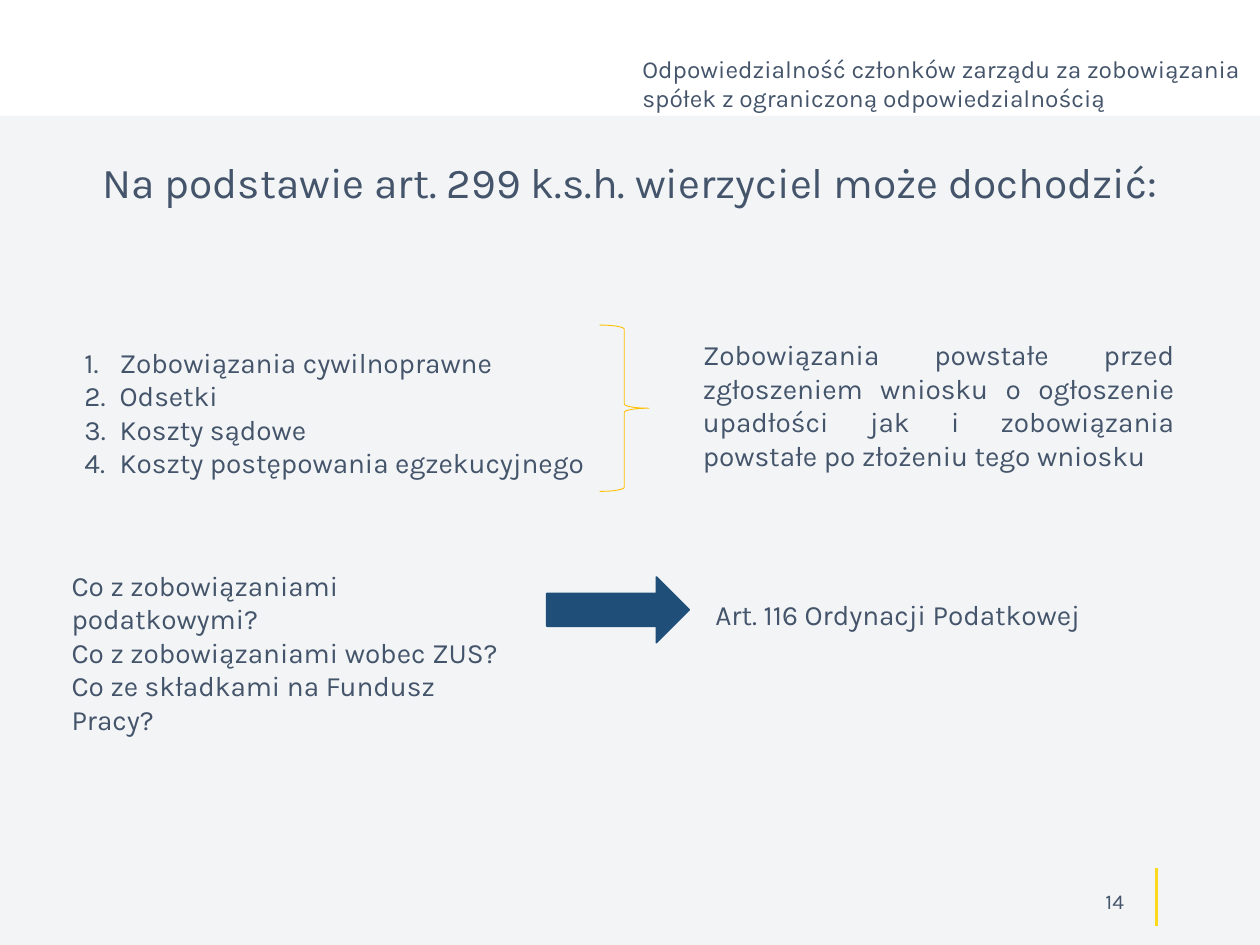
import pptx
import pptx.util
import pptx.dml.color
import pptx.enum.shapes
import pptx.enum.text
import pptx.oxml.ns
from lxml import etree

WIDTH, HEIGHT = 10, 7.5
FONT, TEXT = "Karla", "44546A"
PANEL, ACCENT, ARROW, BRACE = "F2F4F6", "FCD91D", "1F4E79", "FFC000"
ALIGN = pptx.enum.text.PP_ALIGN
ANCHOR = pptx.enum.text.MSO_ANCHOR
SHAPE = pptx.enum.shapes.MSO_SHAPE

TITLE = "Na podstawie art. 299 k.s.h. wierzyciel może dochodzić:"
CLAIMS = [
    "Zobowiązania cywilnoprawne",
    "Odsetki",
    "Koszty sądowe",
    "Koszty postępowania egzekucyjnego",
]
TEXT_BOXES = [
    {"box": (5.48, 2.63, 3.94, 1.18), "align": ALIGN.JUSTIFY, "lines": [
        "Zobowiązania powstałe przed zgłoszeniem wniosku o ogłoszenie upadłości "
        "jak i zobowiązania powstałe po złożeniu tego wniosku"]},
    {"box": (0.47, 4.46, 3.77, 1.43), "lines": [
        "Co z zobowiązaniami podatkowymi?",
        "Co z zobowiązaniami wobec ZUS?",
        "Co ze składkami na Fundusz Pracy?"]},
    {"box": (5.58, 4.69, 3.21, 0.37), "lines": ["Art. 116 Ordynacji Podatkowej"]},
    {"box": (5, 0.38, 5, 0.57), "size": 14, "lines": [
        "Odpowiedzialność członków zarządu za zobowiązania "
        "spółek z ograniczoną odpowiedzialnością"]},
    {"box": (7.06, 6.95, 1.96, 0.4), "size": 12, "align": ALIGN.RIGHT,
     "anchor": ANCHOR.MIDDLE, "lines": ["14"]},
]


def color(value):
    return pptx.dml.color.RGBColor.from_string(value)


def inches(values):
    return [pptx.util.Inches(value) for value in values]


def place(shape, box):
    shape.left, shape.top, shape.width, shape.height = inches(box)


def write(shape, lines, size=16, align=ALIGN.LEFT, anchor=ANCHOR.TOP):
    frame = shape.text_frame
    frame.word_wrap = True
    frame.auto_size = pptx.enum.text.MSO_AUTO_SIZE.NONE
    frame.vertical_anchor = anchor
    for index, line in enumerate(lines):
        paragraph = frame.add_paragraph() if index else frame.paragraphs[0]
        paragraph.alignment = align
        paragraph.space_before = pptx.util.Pt(0)
        run = paragraph.add_run()
        run.text = line
        run.font.name = FONT
        run.font.size = pptx.util.Pt(size)
        run.font.color.rgb = color(TEXT)
    return frame


def number(paragraph, indent):
    properties = paragraph._p.get_or_add_pPr()
    properties.set("marL", str(pptx.util.Inches(indent)))
    properties.set("indent", str(-pptx.util.Inches(indent)))
    bullet = etree.SubElement(properties, pptx.oxml.ns.qn("a:buAutoNum"))
    bullet.set("type", "arabicPeriod")


def add_shape(slide, kind, box, fill=None, line=None, weight=1):
    shape = slide.shapes.add_shape(kind, *inches(box))
    shape.shadow.inherit = False
    if fill:
        shape.fill.solid()
        shape.fill.fore_color.rgb = color(fill)
    else:
        shape.fill.background()
    if line:
        shape.line.color.rgb = color(line)
        shape.line.width = pptx.util.Pt(weight)
    else:
        shape.line.fill.background()
    return shape


def add_line(slide, start, end, line, weight):
    connector = slide.shapes.add_connector(
        pptx.enum.shapes.MSO_CONNECTOR.STRAIGHT, *inches(start + end))
    connector.line.color.rgb = color(line)
    connector.line.width = pptx.util.Pt(weight)
    etree.SubElement(connector._element.spPr, pptx.oxml.ns.qn("a:effectLst"))


def main():
    presentation = pptx.Presentation()
    presentation.slide_width, presentation.slide_height = inches((WIDTH, HEIGHT))
    slide = presentation.slides.add_slide(presentation.slide_layouts[1])

    panel_top = 0.92
    panel = add_shape(slide, SHAPE.RECTANGLE,
                      (0, panel_top, WIDTH, HEIGHT - panel_top), PANEL)
    slide.shapes._spTree.insert(2, panel._element)
    add_line(slide, (9.18, 6.89), (9.18, 7.35), ACCENT, 1.5)

    title = slide.shapes.title
    place(title, (0, 1.37, WIDTH, 0.68))
    frame = write(title, [TITLE], 24.3, ALIGN.CENTER, ANCHOR.BOTTOM)
    frame.margin_top, frame.margin_bottom = inches((0, 0.4))
    frame.paragraphs[0].line_spacing = 0.9

    claims = slide.placeholders[1]
    place(claims, (0.57, 2.69, 4.25, 1.41))
    for paragraph in write(claims, CLAIMS).paragraphs:
        number(paragraph, 0.28)

    for item in TEXT_BOXES:
        options = dict(item)
        text_box = slide.shapes.add_textbox(*inches(options.pop("box")))
        write(text_box, **options)

    add_shape(slide, SHAPE.RIGHT_ARROW, (4.34, 4.58, 1.13, 0.52), ARROW, ARROW)
    add_shape(slide, SHAPE.RIGHT_BRACE, (4.76, 2.58, 0.39, 1.32), line=BRACE, weight=0.5)
    presentation.save("out.pptx")


if __name__ == "__main__":
    main()
